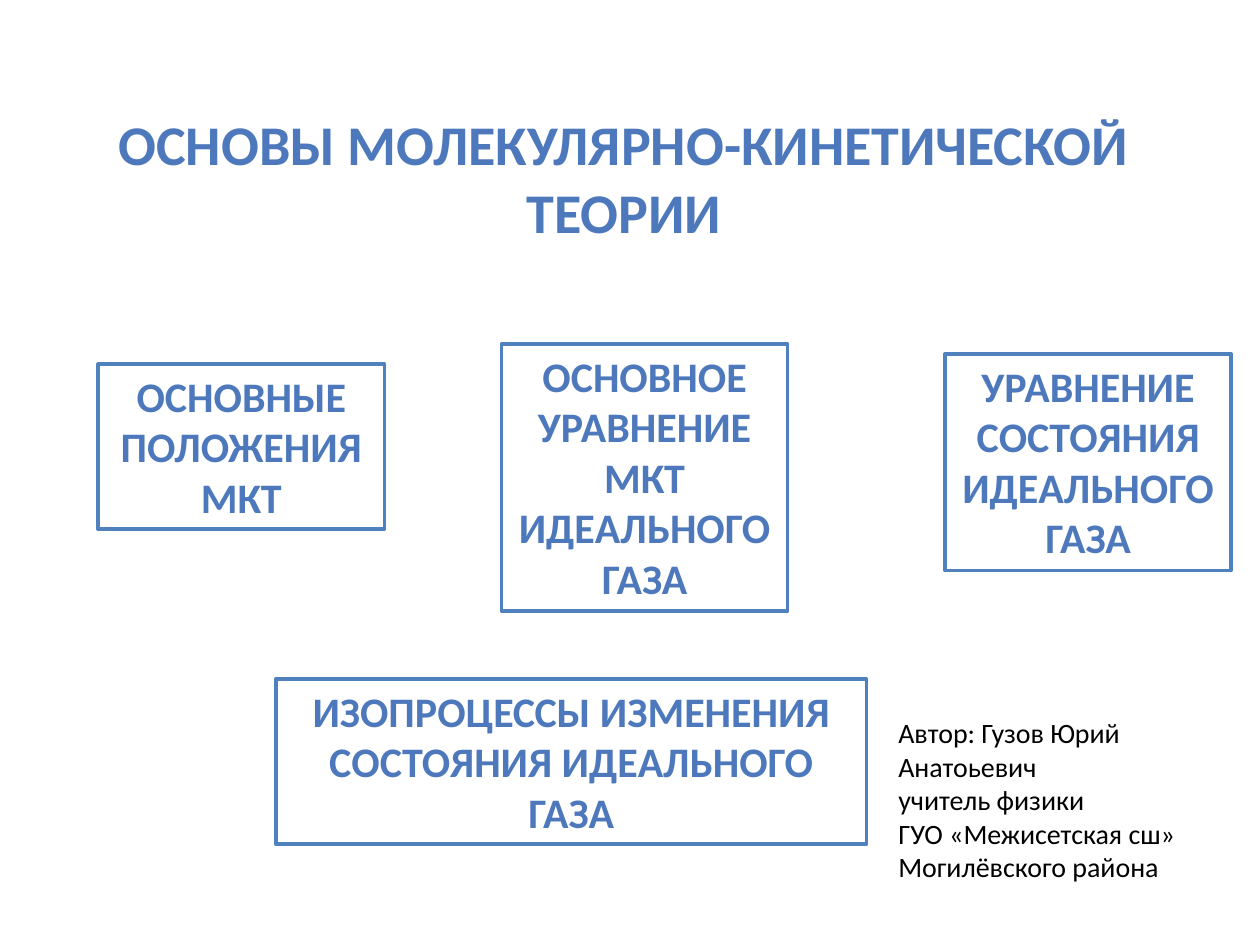
from pptx import Presentation
from pptx.dml.color import RGBColor
from pptx.enum.shapes import MSO_SHAPE
from pptx.enum.text import MSO_ANCHOR, MSO_AUTO_SIZE, PP_ALIGN
from pptx.util import Cm, Pt

BLUE = RGBColor(0x4D, 0x79, 0xBC)
BORDER = RGBColor(0x4F, 0x81, 0xBD)
WHITE = RGBColor(0xFF, 0xFF, 0xFF)
BLACK = RGBColor(0x00, 0x00, 0x00)

TOPIC_WIDTH = 5.77
TOPICS = [
    ("ОСНОВНЫЕ ПОЛОЖЕНИЯ МКТ", (1.98, 7.34, TOPIC_WIDTH, 3.33)),
    ("ОСНОВНОЕ УРАВНЕНИЕ МКТ ИДЕАЛЬНОГО ГАЗА", (10.11, 6.94, TOPIC_WIDTH, 5.38)),
    ("УРАВНЕНИЕ СОСТОЯНИЯ ИДЕАЛЬНОГО ГАЗА", (19.05, 7.14, TOPIC_WIDTH, 4.36)),
    ("ИЗОПРОЦЕССЫ ИЗМЕНЕНИЯ СОСТОЯНИЯ ИДЕАЛЬНОГО ГАЗА", (5.56, 13.69, 11.91, 3.33)),
]
AUTHOR = [
    "Автор: Гузов Юрий Анатоьевич",
    "учитель физики",
    "ГУО «Межисетская сш» Могилёвского района",
]


class SlideBuilder:
    """Holds the text styles and the slide being filled."""

    HEADING = {"name": "Calibri", "size": Pt(32), "bold": True}
    TOPIC = {"name": "Calibri", "size": Pt(24), "bold": True}
    NOTE = {"name": "Calibri", "size": Pt(16), "bold": False}

    def __init__(self, prs):
        self.s = prs.slides.add_slide(prs.slide_layouts[5])

    def add_text(self, sp, lines, style, color, align, anchor=MSO_ANCHOR.TOP,
                 auto_size=MSO_AUTO_SIZE.SHAPE_TO_FIT_TEXT):
        tf = sp.text_frame
        frame_format = {"word_wrap": True, "auto_size": auto_size,
                        "vertical_anchor": anchor}
        for name, value in frame_format.items():
            setattr(tf, name, value)
        for i, line in enumerate(lines):
            p = tf.add_paragraph() if i else tf.paragraphs[0]
            p.alignment = align
            r = p.add_run()
            r.text = line
            for name, value in style.items():
                setattr(r.font, name, value)
            r.font.color.rgb = color

    def title(self, text, box):
        sp = self.s.shapes.title
        for name, value in zip(("left", "top", "width", "height"), box):
            setattr(sp, name, Cm(value))
        self.add_text(sp, [text], self.HEADING, BLUE, PP_ALIGN.CENTER,
                      MSO_ANCHOR.MIDDLE, MSO_AUTO_SIZE.NONE)

    def topic(self, text, box):
        sp = self.s.shapes.add_shape(MSO_SHAPE.RECTANGLE, *map(Cm, box))
        sp.shadow.inherit = False
        sp.fill.solid()
        sp.fill.fore_color.rgb = WHITE
        sp.line.color.rgb = BORDER
        sp.line.width = Pt(2)
        self.add_text(sp, [text], self.TOPIC, BLUE, PP_ALIGN.CENTER)

    def note(self, lines, box):
        sp = self.s.shapes.add_textbox(*map(Cm, box))
        self.add_text(sp, lines, self.NOTE, BLACK, PP_ALIGN.LEFT)


def main():
    prs = Presentation()
    prs.slide_width, prs.slide_height = Cm(25.4), Cm(19.05)
    slide = SlideBuilder(prs)
    slide.title("ОСНОВЫ МОЛЕКУЛЯРНО-КИНЕТИЧЕСКОЙ ТЕОРИИ", (1.78, 0.79, 21.59, 5.56))
    for text, box in TOPICS:
        slide.topic(text, box)
    slide.note(AUTHOR, (17.86, 14.3, 7.14, 3.68))
    prs.save("out.pptx")


if __name__ == "__main__":
    main()
